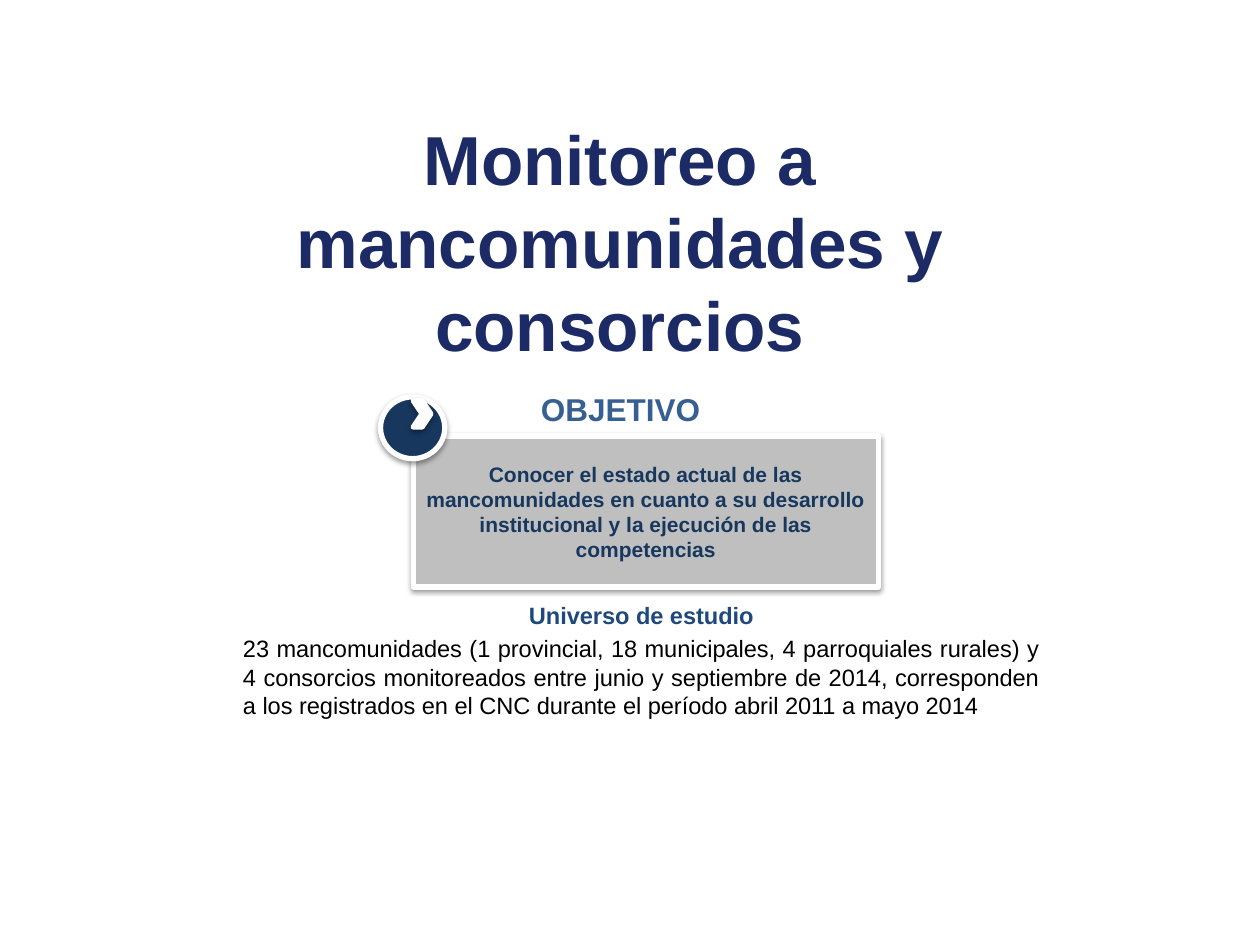
from lxml import etree
from pptx import Presentation
from pptx import util as u
from pptx.dml.color import RGBColor
from pptx.enum import shapes, text
from pptx.oxml.ns import qn

INDIGO = RGBColor(0x1C, 0x2A, 0x66)
NAVY = RGBColor(0x17, 0x37, 0x5E)
STEEL = RGBColor(0x37, 0x60, 0x92)
BLUE = RGBColor(0x1F, 0x49, 0x7D)
GRAY = RGBColor(0xBF, 0xBF, 0xBF)
WHITE = RGBColor(0xFF, 0xFF, 0xFF)
BLACK = RGBColor(0, 0, 0)

MID, JUST = text.PP_ALIGN.CENTER, text.PP_ALIGN.JUSTIFY
KIND = shapes.MSO_SHAPE


def style(par, size, color, bold=True, align=MID):
    par.alignment = align
    for run in par.runs:
        run.font.name = "Arial"
        run.font.size = u.Pt(size)
        run.font.bold = bold
        run.font.color.rgb = color


def block(kind, fill, *box):
    """White-edged shape with a soft shadow below it."""
    shape = slide.shapes.add_shape(kind, *map(u.Inches, box))
    shape.fill.solid()
    shape.fill.fore_color.rgb = fill
    shape.line.color.rgb = WHITE
    shape.line.width = u.Pt(3)
    shape.shadow.inherit = False
    glow = etree.SubElement(
        shape._element.spPr.find(qn("a:effectLst")), qn("a:outerShdw"),
        blurRad=str(u.Pt(3.1)), dist=str(u.Pt(1.6)), dir="5400000",
        rotWithShape="0")
    tone = etree.SubElement(glow, qn("a:srgbClr"), val="000000")
    etree.SubElement(tone, qn("a:alpha"), val="38000")
    return shape


deck = Presentation()
deck.slide_width, deck.slide_height = u.Inches(10), u.Inches(7.5)
slide = deck.slides.add_slide(deck.slide_layouts[5])

# Title
title = slide.shapes.title
title.left, title.top = u.Inches(1.75), u.Inches(1.57)
title.width, title.height = u.Inches(6.34), u.Inches(0.68)
title.text_frame.text = "Monitoreo a mancomunidades y consorcios"
title.text_frame.auto_size = text.MSO_AUTO_SIZE.NONE
title.text_frame.vertical_anchor = text.MSO_ANCHOR.MIDDLE
style(title.text_frame.paragraphs[0], 39.6, INDIGO)

# Objective panel with its round badge
panel = block(KIND.RECTANGLE, GRAY, 3.28, 3.46, 3.69, 1.2)
panel.text_frame.text = (
    "Conocer el estado actual de las mancomunidades en cuanto a su "
    "desarrollo institucional y la ejecución de las competencias")
panel.text_frame.vertical_anchor = text.MSO_ANCHOR.MIDDLE
style(panel.text_frame.paragraphs[0], 12, NAVY)
block(KIND.OVAL, NAVY, 3.02, 3.15, 0.51, 0.49)
block(KIND.CHEVRON, WHITE, 3.28, 3.18, 0.14, 0.21)

# Objective heading
head = slide.shapes.add_textbox(*map(u.Inches, (1.93, 3.05, 5.99, 0.4)))
head.text_frame.word_wrap = True
head.text_frame.text = "OBJETIVO"
style(head.text_frame.paragraphs[0], 18, STEEL)

# Study universe
study = slide.shapes.add_textbox(*map(u.Inches, (1.83, 4.52, 6.52, 1.44)))
frame = study.text_frame
frame.word_wrap = True
frame.vertical_anchor = text.MSO_ANCHOR.MIDDLE
frame.text = "Universo de estudio"
style(frame.paragraphs[0], 13.5, BLUE)
body = frame.add_paragraph()
body.text = (
    "23 mancomunidades (1 provincial, 18 municipales, 4 parroquiales "
    "rurales) y 4 consorcios monitoreados entre junio y septiembre de 2014, "
    "corresponden a los registrados en el CNC durante el período abril 2011 "
    "a mayo 2014")
body.space_before = u.Pt(2.7)
style(body, 13.5, BLACK, False, JUST)

deck.save("out.pptx")
